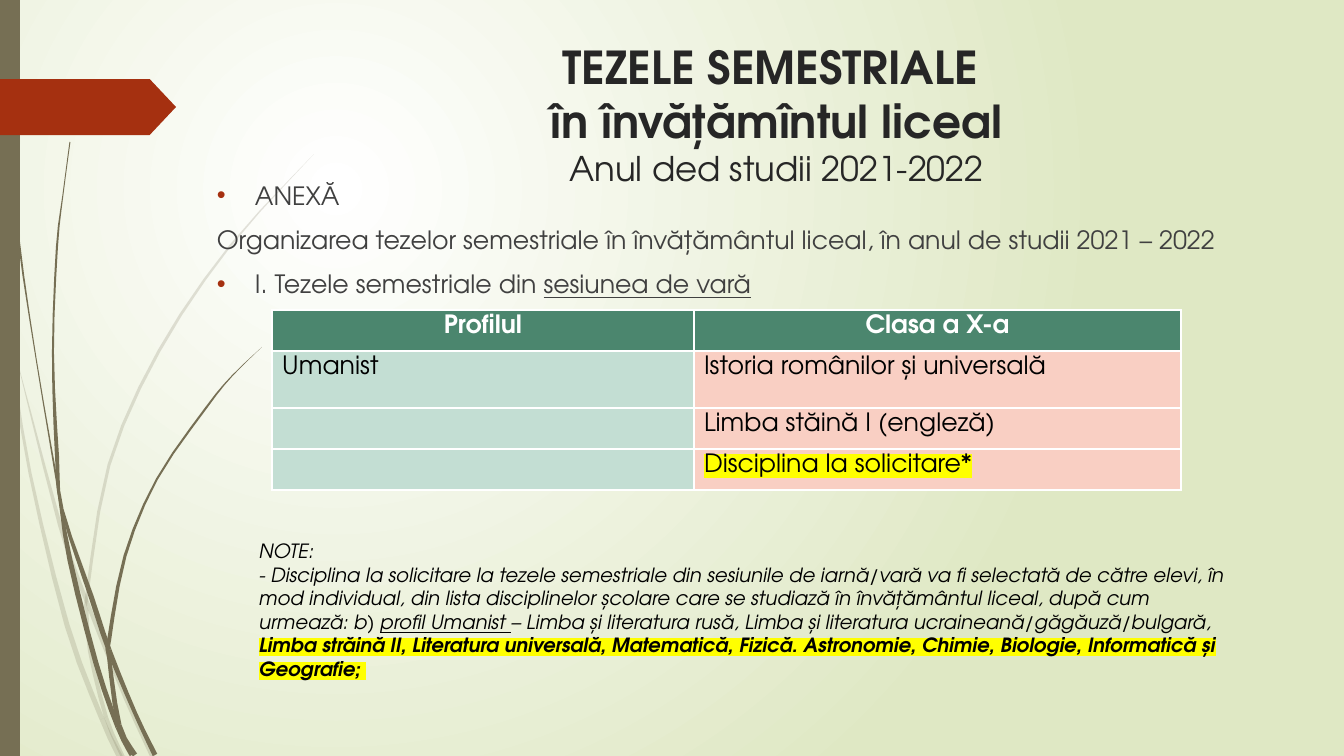
from math import hypot

from lxml.etree import SubElement
from pptx import Presentation
from pptx.dml.color import RGBColor
from pptx.enum.shapes import MSO_SHAPE as Preset
from pptx.enum.text import MSO_ANCHOR as Anchor, PP_ALIGN as Align
from pptx.oxml import parse_xml
from pptx.oxml.ns import nsdecls, qn
from pptx.util import Pt

EMU_PER_PX = 914400 / 100.8
FONT = "TeX Gyre Adventor"

WHITE = RGBColor(0xFF, 0xFF, 0xFF)
BLACK = RGBColor(0, 0, 0)
PALE_GREEN = RGBColor(0xDF, 0xE8, 0xC4)
OLIVE = RGBColor(0x76, 0x6F, 0x54)
RUST = RGBColor(0xA5, 0x30, 0x10)
TITLE_GREY = RGBColor(0x26, 0x26, 0x26)
BODY_GREY = RGBColor(0x40, 0x40, 0x40)
HEADER_GREEN = RGBColor(0x4B, 0x86, 0x6E)
MINT = RGBColor(0xC3, 0xDE, 0xD3)
PINK = RGBColor(0xF9, 0xCF, 0xC3)
YELLOW = RGBColor(0xFF, 0xFF, 0x00)

FAINT_BLADES = [
    ([(0, 293, 4), (10, 350, 3), (30, 473, 3), (67, 625, 5), (102, 719, 5),
      (120, 757, 6)], (1, 4)),
    ([(14, 348, 0), (60, 525, 4), (87, 602, 4), (126, 699, 4), (153, 757, 5)], (2,)),
    ([(314, 154, 0), (230, 246, 2), (159, 351, 3), (109, 465, 3), (87, 595, 3),
      (87, 611, 3), (90, 651, 4), (106, 717, 4), (123, 757, 4)], (4, 5, 7)),
]
DARK_BLADES = [
    ([(4, 0, 1), (5, 48, 1), (8, 110, 1), (18, 234, 2), (36, 358, 1), (57, 482, 2),
      (70, 560, 5), (96, 663, 5), (118, 727, 5), (132, 755, 5)], (5, 8)),
    ([(70, 142, 1), (63, 195, 1), (57, 247, 2), (53, 352, 2), (57, 455, 4),
      (62, 509, 3), (91, 596, 5), (109, 650, 5), (135, 713, 4), (155, 755, 5)], (4, 5, 7)),
    ([(262, 347, 0), (232, 376, 1), (206, 408, 2), (157, 479, 2), (125, 556, 3),
      (109, 641, 4), (109, 657, 4), (119, 725, 5), (135, 755, 5)], (5, 6, 7)),
]
CURVE_STEPS = 3


def px(value):
    return round(value * EMU_PER_PX)


def blend(a, b, c, d, t):
    return (2 * b + (c - a) * t + (2 * a - 5 * b + 4 * c - d) * t ** 2
            + (3 * b - a - 3 * c + d) * t ** 3) / 2


def smooth_path(stations):
    padded = [stations[0], *stations, stations[-1]]
    path = [tuple(blend(*axis, step / CURVE_STEPS) for axis in zip(*padded[i:i + 4]))
            for i in range(len(stations) - 1) for step in range(CURVE_STEPS)]
    return path + [stations[-1]]


def paint(shape, color):
    shape.fill.solid()
    shape.fill.fore_color.rgb = color
    shape.line.fill.background()
    shape.shadow.inherit = False


def add_section(slide, outline, opacity):
    builder = slide.shapes.build_freeform(*outline[0])
    builder.add_line_segments(outline[1:], close=True)
    section = builder.convert_to_shape()
    paint(section, OLIVE)
    if opacity < 100:
        tint = section.fill._xPr.find(qn("a:solidFill"))[0]
        SubElement(tint, qn("a:alpha"), val=str(opacity * 1000))


def add_blade(slide, stations, joints, opacity):
    path = smooth_path(stations)
    left_edge, right_edge = [], []
    for i, (x, y, width) in enumerate(path):
        before, after = path[max(i - 1, 0)], path[min(i + 1, len(path) - 1)]
        dx, dy = after[0] - before[0], after[1] - before[1]
        half = width / 2 / hypot(dx, dy)
        left_edge.append((px(x - dy * half), px(y + dx * half)))
        right_edge.append((px(x + dy * half), px(y - dx * half)))
    ends = [0, *joints, len(stations) - 1]
    for first, last in zip(ends, ends[1:]):
        span = slice(first * CURVE_STEPS, last * CURVE_STEPS + 1)
        add_section(slide, left_edge[span] + right_edge[span][::-1], opacity)


def add_block(slide, preset, box, color):
    block = slide.shapes.add_shape(preset, *map(px, box))
    paint(block, color)
    return block


def fill_background(slide):
    fill = slide.background.fill
    fill.gradient()
    for stop, color in zip(fill.gradient_stops, (WHITE, PALE_GREEN)):
        stop.color.rgb = color
    gradient = slide.background._cSld.find(".//" + qn("a:gradFill"))
    direction = gradient.find(qn("a:lin"))
    gradient.replace(direction, parse_xml(
        f'<a:path {nsdecls("a")} path="circle"><a:fillToRect '
        'l="50000" t="50000" r="100000" b="100000"/></a:path>'))


def add_run(paragraph, text, color, highlight=None, **formats):
    run = paragraph.add_run()
    run.text = text
    run.font.color.rgb = color
    for name, value in {"name": FONT, **formats}.items():
        setattr(run.font, name, value)
    if highlight:
        run.font._element.find(qn("a:latin")).addprevious(parse_xml(
            f'<a:highlight {nsdecls("a")}><a:srgbClr val="{highlight}"/></a:highlight>'))


def add_bullet(paragraph):
    properties = paragraph._p.get_or_add_pPr()
    properties.set("marL", str(px(38)))
    properties.set("indent", str(px(-38)))
    tint = SubElement(properties, qn("a:buClr"))
    SubElement(tint, qn("a:srgbClr"), val=str(RUST))
    SubElement(properties, qn("a:buFont"), typeface="Arial")
    SubElement(properties, qn("a:buChar"), char="•")


def add_text(slide, box):
    frame = slide.shapes.add_textbox(*map(px, box)).text_frame
    frame.word_wrap = True
    frame.vertical_anchor = Anchor.TOP
    return frame


def add_title(slide):
    line = add_text(slide, (285, 34, 983, 141)).paragraphs[0]
    line.alignment = Align.CENTER
    for text in ("TEZELE SEMESTRIALE ", "în învățămîntul liceal"):
        add_run(line, text, TITLE_GREY, size=Pt(32.4), bold=True)
        line.add_line_break()
    add_run(line, "Anul ded studii 2021-2022", TITLE_GREY, size=Pt(24.3))


def add_annex(slide):
    frame = add_text(slide, (207, 175, 1090, 416))
    entries = [
        (True, "ANEXĂ", ""),
        (False, "Organizarea tezelor semestriale în învățământul liceal, "
                "în anul de studii 2021 – 2022", ""),
        (True, "I. Tezele semestriale din ", "sesiunea de vară"),
    ]
    for i, (bulleted, text, underlined) in enumerate(entries):
        line = frame.add_paragraph() if i else frame.paragraphs[0]
        line.space_before = Pt(10)
        if bulleted:
            add_bullet(line)
        add_run(line, text, BODY_GREY, size=Pt(18))
        if underlined:
            add_run(line, underlined, BODY_GREY, size=Pt(18), underline=True)


def add_subjects(slide):
    rows = [("Profilul", "Clasa a X-a"), ("Umanist", "Istoria românilor și universală"),
            ("", "Limba stăină I (engleză)"), ("", "Disciplina la solicitare*")]
    widths, heights = (422, 487), (41, 57, 41, 41)
    box = (272, 310, sum(widths), sum(heights))
    table = slide.shapes.add_table(len(rows), len(widths), *map(px, box)).table
    for column, width in zip(table.columns, widths):
        column.width = px(width)
    for r, (texts, height) in enumerate(zip(rows, heights)):
        table.rows[r].height = px(height)
        header = r == 0
        for c, text in enumerate(texts):
            cell = table.cell(r, c)
            cell.fill.solid()
            cell.fill.fore_color.rgb = HEADER_GREEN if header else (MINT, PINK)[c]
            line = cell.text_frame.paragraphs[0]
            line.alignment = Align.CENTER if header else Align.LEFT
            if text:
                add_run(line, text, WHITE if header else BLACK,
                        YELLOW if text.endswith("*") else None, size=Pt(18), bold=header)


def add_note(slide):
    frame = add_text(slide, (249, 534, 1006, 152))
    note = {"color": BLACK, "size": Pt(14), "italic": True}
    add_run(frame.paragraphs[0], "NOTE:", **note)
    line = frame.add_paragraph()
    pieces = [
        ("- Disciplina la solicitare la tezele semestriale din sesiunile de iarnă/vară "
         "va fi selectată de către elevi, în mod individual, din lista disciplinelor "
         "școlare care se studiază în învățământul liceal, după cum urmează: b) ", {}),
        ("profil Umanist ", {"underline": True}),
        ("– Limba și literatura rusă, Limba și literatura ucraineană/găgăuză/bulgară, ", {}),
        ("Limba străină II, Literatura universală, Matematică, Fizică. Astronomie, "
         "Chimie, Biologie, Informatică și Geografie; ", {"bold": True, "highlight": YELLOW}),
    ]
    for text, emphasis in pieces:
        add_run(line, text, **note, **emphasis)


def main():
    deck = Presentation()
    deck.slide_width, deck.slide_height = px(1344), px(756)
    slide = deck.slides.add_slide(deck.slide_layouts[6])
    fill_background(slide)
    for blades, opacity in ((FAINT_BLADES, 20), (DARK_BLADES, 100)):
        for stations, joints in blades:
            add_blade(slide, stations, joints, opacity)
    add_block(slide, Preset.RECTANGLE, (0, 0, 20, 756), OLIVE)
    flag = add_block(slide, Preset.PENTAGON, (0, 79, 176, 56), RUST)
    flag.adjustments[0] = 0.47
    add_title(slide)
    add_annex(slide)
    add_subjects(slide)
    add_note(slide)
    deck.save("out.pptx")


if __name__ == "__main__":
    main()
